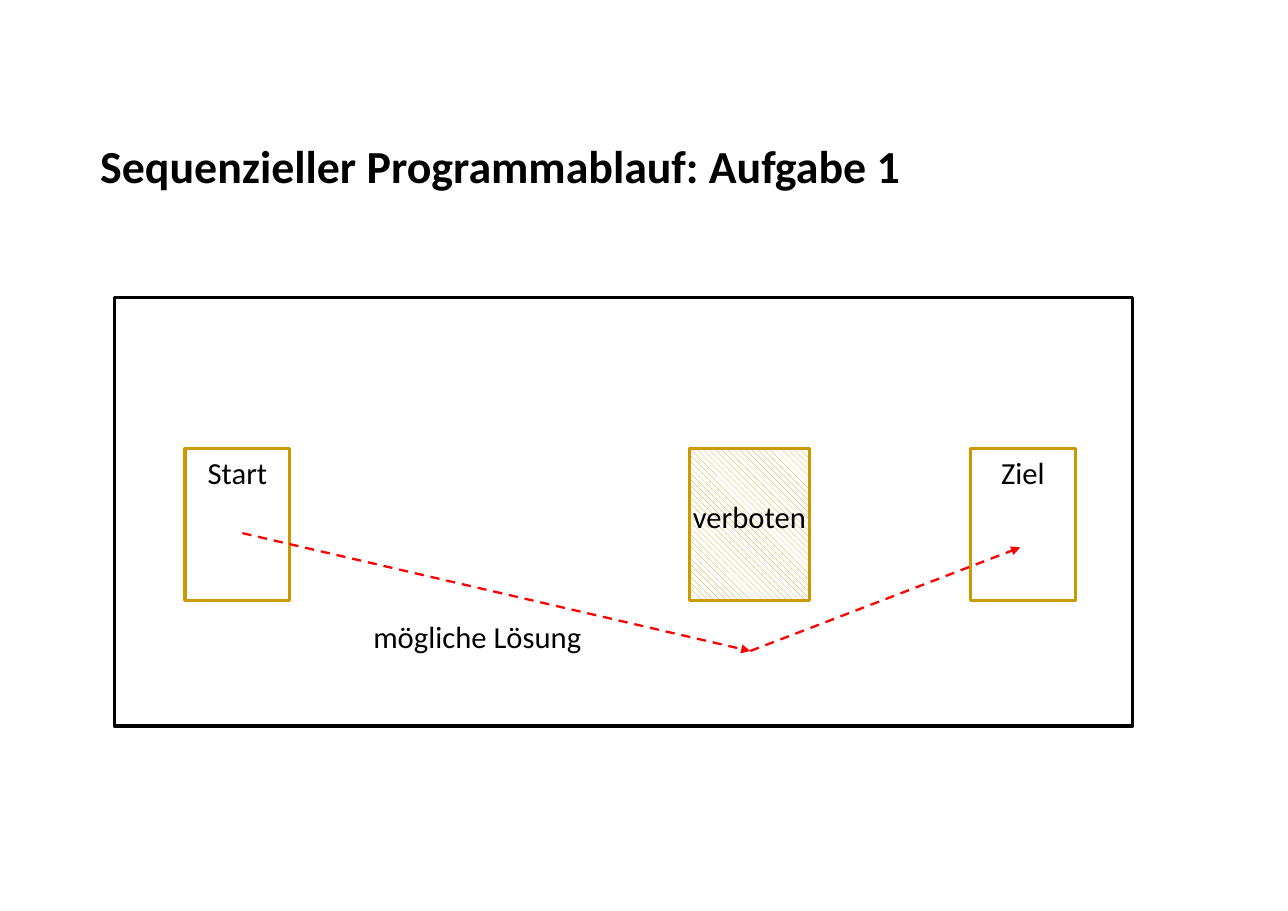
from lxml import etree
from pptx import Presentation
from pptx import util as u
from pptx.dml.color import RGBColor
from pptx.enum import dml, shapes, text
from pptx.oxml import ns

COLORS = {"ink": "000000", "paper": "FFFFFF", "gold": "CC9900", "route": "FF0000"}
FONT = "Calibri"
TITLE = ("Sequenzieller Programmablauf: Aufgabe 1", (0.81, 1.2, 9.21, 0.86))
FIELD = (1.04, 2.7, 9.24, 3.89)
ZONE_TOP, ZONE_HEIGHT = 4.07, 1.38
ZONES = [
    {"label": "Start", "left": 1.68, "width": 0.95, "hatched": False},
    {"label": "Ziel", "left": 8.81, "width": 0.95, "hatched": False},
    {"label": "", "left": 6.26, "width": 1.09, "hatched": True},
]
NOTES = [
    ("verboten", (6.19, 4.47, 2.08, 0.78)),
    ("mögliche Lösung", (3.29, 5.56, 3.27, 0.78)),
]
ROUTE = [(2.2, 4.84), (6.81, 5.91), (9.26, 4.97)]


def color(name):
    return RGBColor.from_string(COLORS[name])


def inches(values):
    return [u.Inches(value) for value in values]


def write(box, words, size=20, bold=False, align=text.PP_ALIGN.LEFT, after=10):
    frame = box.text_frame
    frame.text = words
    frame.word_wrap = True
    frame.auto_size = text.MSO_AUTO_SIZE.NONE
    frame.vertical_anchor = text.MSO_ANCHOR.TOP
    para = frame.paragraphs[0]
    para.alignment = align
    para.space_after = u.Pt(after)
    font = para.runs[0].font
    font.name, font.size, font.bold = FONT, u.Pt(size), bold
    font.color.rgb = color("ink")


def add_rectangle(place, outline):
    box = page.shapes.add_shape(shapes.MSO_SHAPE.RECTANGLE, *inches(place))
    box.shadow.inherit = False
    box.fill.solid()
    box.fill.fore_color.rgb = color("paper")
    box.line.color.rgb = color(outline)
    box.line.width = u.Pt(2.25)
    return box


def add_arrow(start, end):
    arrow = page.shapes.add_connector(
        shapes.MSO_CONNECTOR.STRAIGHT, *inches(start + end))
    arrow.line.color.rgb = color("route")
    arrow.line.width = u.Pt(1.5)
    arrow.line.dash_style = dml.MSO_LINE.DASH
    properties = arrow.element.spPr
    outline = properties.find(ns.qn("a:ln"))
    etree.SubElement(outline, ns.qn("a:tailEnd"), type="triangle")
    etree.SubElement(properties, ns.qn("a:effectLst"))


deck = Presentation()
deck.slide_width, deck.slide_height = inches((11.69, 8.27))
page = deck.slides.add_slide(deck.slide_layouts[5])

title = page.shapes.title
words, place = TITLE
title.left, title.top, title.width, title.height = inches(place)
write(title, words, size=30, bold=True, after=0)

add_rectangle(FIELD, "ink")
for zone in ZONES:
    place = (zone["left"], ZONE_TOP, zone["width"], ZONE_HEIGHT)
    box = add_rectangle(place, "gold")
    if zone["hatched"]:
        box.fill.patterned()
        box.fill.pattern = dml.MSO_PATTERN.WIDE_DOWNWARD_DIAGONAL
        box.fill.fore_color.rgb = color("gold")
        box.fill.back_color.rgb = color("paper")
    else:
        write(box, zone["label"], align=text.PP_ALIGN.CENTER)

for words, place in NOTES:
    write(page.shapes.add_textbox(*inches(place)), words)

for start, end in zip(ROUTE, ROUTE[1:]):
    add_arrow(start, end)

deck.save("out.pptx")
